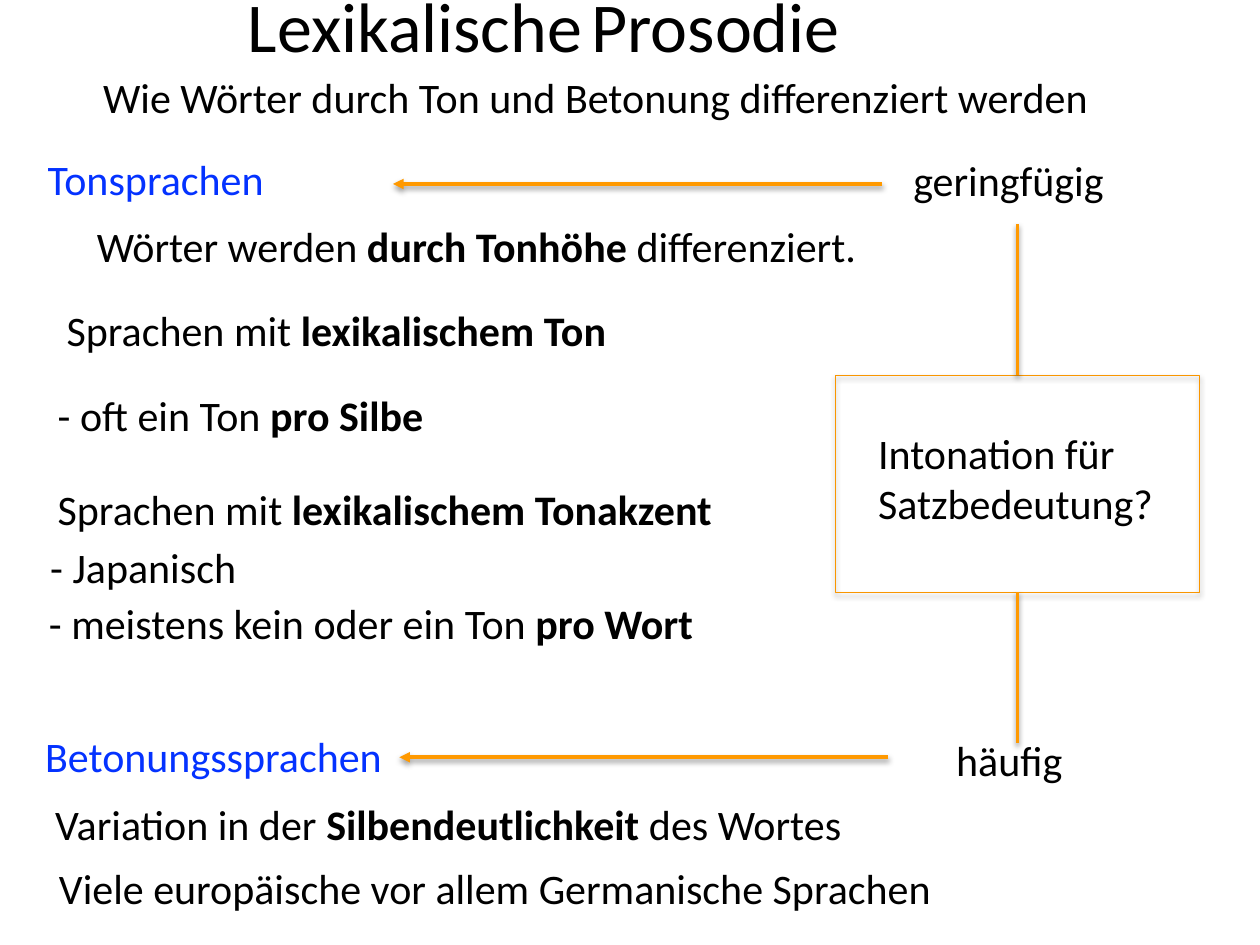
import pptx
import pptx.dml.color
import pptx.enum.shapes
import pptx.enum.text
import pptx.oxml.ns
import pptx.util
from lxml import etree

Inches = pptx.util.Inches
Pt = pptx.util.Pt

FONT = "Calibri"
BLACK, BLUE, ORANGE, FRAME_ORANGE = "000000", "0432FF", "FF9900", "F99600"

# Text between double asterisks is bold: text, left, top, width, height, colour, wrap
TEXTS = [
    ("Wie Wörter durch Ton und Betonung differenziert werden", 0.72, 0.52, 8.68, 0.5, BLACK, True),
    ("Tonsprachen", 0.28, 1.17, 1.94, 0.5, BLUE, False),
    ("Wörter werden **durch Tonhöhe **differenziert.", 0.67, 1.7, 6.26, 0.5, BLACK, False),
    ("Sprachen mit **lexikalischem Ton", 0.43, 2.37, 4.52, 0.5, BLACK, False),
    ("- oft ein Ton **pro Silbe", 0.36, 3.04, 3.14, 0.5, BLACK, False),
    ("Sprachen mit **lexikalischem Tonakzent", 0.36, 3.79, 5.44, 0.5, BLACK, False),
    ("- Japanisch", 0.3, 4.25, 1.69, 0.5, BLACK, False),
    ("- meistens kein oder ein Ton **pro Wort", 0.29, 4.69, 5.33, 0.5, BLACK, False),
    ("Betonungssprachen", 0.26, 5.75, 2.9, 0.5, BLUE, False),
    ("Variation in der **Silbendeutlichkeit **des Wortes", 0.34, 6.29, 6.63, 0.5, BLACK, True),
    ("Viele europäische vor allem Germanische Sprachen", 0.37, 6.8, 7.7, 0.5, BLACK, True),
    ("geringfügig", 7.15, 1.18, 1.73, 0.5, BLACK, False),
    ("Intonation für Satzbedeutung?", 6.87, 3.34, 2.65, 0.91, BLACK, True),
    ("häufig", 7.49, 5.78, 1.06, 0.5, BLACK, False),
]
TITLE = [("Lexikalische", 40), (" ", 24), ("Prosodie", 40)]
QUESTION_FRAME = (6.63, 2.98, 2.89, 1.72)
ARROWS = [(7, 3.12, 1.46), (7.05, 3.17, 6.01)]  # from x, to x, y
STEMS = [(1.78, 0), (5.9, 2)]  # outer end y, joined side of the frame


def colour(value):
    return pptx.dml.color.RGBColor.from_string(value)


def add_box(page, left, top, width, height, wrap=True):
    box = page.shapes.add_textbox(Inches(left), Inches(top), Inches(width), Inches(height))
    box.text_frame.word_wrap = wrap
    box.text_frame.auto_size = pptx.enum.text.MSO_AUTO_SIZE.SHAPE_TO_FIT_TEXT
    return box


def add_span(para, text, size=24, bold=False, fill=BLACK):
    span = para.add_run()
    span.text = text
    span.font.name = FONT
    span.font.size = Pt(size)
    span.font.bold = bold
    span.font.color.rgb = colour(fill)


def add_text(page, text, left, top, width, height, fill, wrap):
    para = add_box(page, left, top, width, height, wrap).text_frame.paragraphs[0]
    for index, part in enumerate(text.split("**")):
        add_span(para, part, bold=index % 2 == 1, fill=fill)


def add_shadow(shape, distance, opacity):
    """Give the shape a soft black shadow straight below it."""
    qn = pptx.oxml.ns.qn
    effects = etree.SubElement(shape._element.spPr, qn("a:effectLst"))
    shadow = etree.SubElement(effects, qn("a:outerShdw"), blurRad=str(Pt(3.1)),
                              dist=str(Pt(distance)), dir="5400000", rotWithShape="0")
    black = etree.SubElement(shadow, qn("a:srgbClr"), val=BLACK)
    etree.SubElement(black, qn("a:alpha"), val=str(opacity * 1000))


def add_line(page, start, end, arrow=False):
    line = page.shapes.add_connector(pptx.enum.shapes.MSO_CONNECTOR.STRAIGHT,
                                     *map(Inches, start + end))
    line.line.color.rgb = colour(ORANGE)
    line.line.width = Pt(2)
    if arrow:
        etree.SubElement(line.line._get_or_add_ln(), pptx.oxml.ns.qn("a:tailEnd"), type="triangle")
    add_shadow(line, 1.6, 38)
    return line


def add_frame(page, left, top, width, height):
    frame = page.shapes.add_shape(pptx.enum.shapes.MSO_SHAPE.RECTANGLE,
                                  Inches(left), Inches(top), Inches(width), Inches(height))
    frame.fill.background()
    frame.line.color.rgb = colour(FRAME_ORANGE)
    frame.line.width = Pt(0.75)
    add_shadow(frame, 1.8, 35)
    return frame


def main():
    deck = pptx.Presentation()
    deck.slide_width, deck.slide_height = Inches(10), Inches(7.5)
    page = deck.slides.add_slide(deck.slide_layouts[6])

    title = add_box(page, 1.87, -0.19, 6.14, 0.77).text_frame.paragraphs[0]
    for text, size in TITLE:
        add_span(title, text, size=size)
    for entry in TEXTS:
        add_text(page, *entry)

    frame = add_frame(page, *QUESTION_FRAME)
    for start, end, y in ARROWS:
        add_line(page, (start, y), (end, y), arrow=True)
    left, top, width, height = QUESTION_FRAME
    middle = left + width / 2
    for outer, side in STEMS:
        edge = top if side == 0 else top + height
        stem = add_line(page, (middle, edge), (middle, outer))
        stem.begin_connect(frame, side)

    deck.save("out.pptx")


if __name__ == "__main__":
    main()
